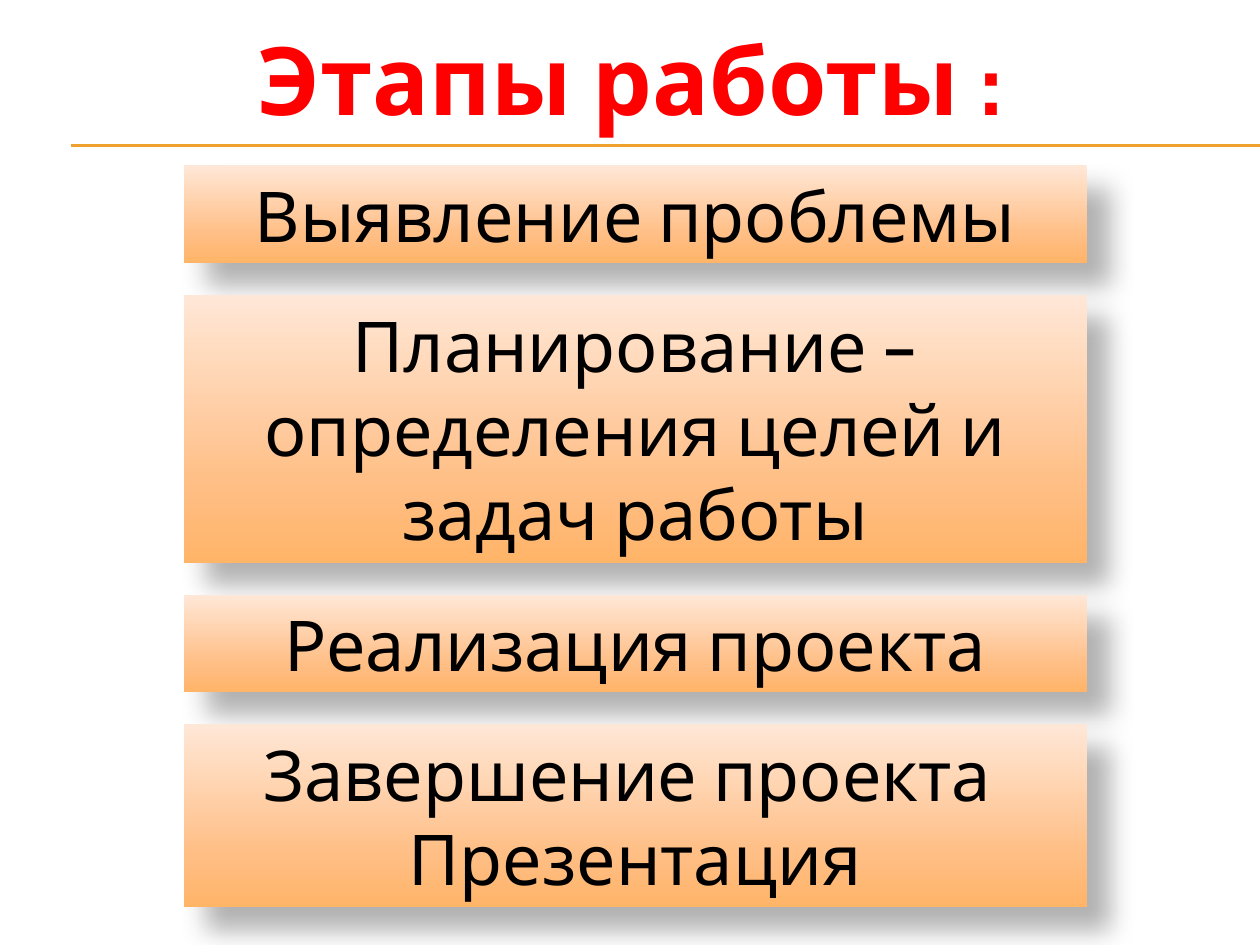
from copy import deepcopy

from lxml import etree
from pptx import Presentation
from pptx.dml.color import RGBColor
from pptx.enum import shapes, text
from pptx.oxml import ns
from pptx.util import Pt

RED = RGBColor(0xFF, 0x00, 0x00)
GOLD = RGBColor(0xF0, 0xA2, 0x2E)
BLACK = RGBColor(0x00, 0x00, 0x00)
STOPS = [
    (0, RGBColor(0xFF, 0xE7, 0xD7)),
    (0.72, RGBColor(0xFF, 0xBE, 0x84)),
    (1, RGBColor(0xFF, 0xB4, 0x68)),
]
FONT = "Cabin"
WIDTH, HEIGHT = 720, 540
LINE, PAD, GAP = 48.6, 7.2, 18.3  # text line, top and bottom inset, space between boxes

# Each stage: its paragraphs and the number of lines they fill
STAGES = [
    ("Выявление проблемы", 1),
    ("Планирование – определения целей и задач работы", 3),
    ("Реализация проекта", 1),
    ("Завершение проекта \nПрезентация", 2),
]


def style(frame, size, color, bold=False):
    frame.word_wrap = True
    frame.vertical_anchor = text.MSO_ANCHOR.MIDDLE
    for para in frame.paragraphs:
        para.alignment = text.PP_ALIGN.CENTER
        for run in para.runs:
            font = run.font
            font.name, font.size, font.bold = FONT, Pt(size), bold
            font.color.rgb = color


def add_title(slide, left, top, width, height):
    title = slide.shapes.title
    title.left, title.top = Pt(left), Pt(top)
    title.width, title.height = Pt(width), Pt(height)
    title.text_frame.text = "Этапы работы :"
    style(title.text_frame, 54, RED, True)


def add_rules(slide, left, top, width):
    """Draw the double line under the title."""
    for y in (top, top + 0.7):
        rule = slide.shapes.add_connector(
            shapes.MSO_CONNECTOR.STRAIGHT, Pt(left), Pt(y), Pt(left + width), Pt(y))
        rule.line.color.rgb = GOLD
        rule.line.width = Pt(0.75)
        etree.SubElement(rule._element.spPr, ns.qn("a:effectLst"))


def shade(shape):
    """Fill from top to bottom through all the colour stops."""
    shape.fill.gradient()
    shape.fill.gradient_angle = 270
    stops = shape._element.spPr.find(".//" + ns.qn("a:gsLst"))
    stops.append(deepcopy(stops[0]))
    for stop, (place, color) in zip(shape.fill.gradient_stops, STOPS):
        stop.position = place
        stop.color.rgb = color


def cast(shape):
    """Add a soft shadow to the lower right."""
    shape.shadow.inherit = False
    effects = shape._element.spPr.find(ns.qn("a:effectLst"))
    outer = etree.SubElement(
        effects, ns.qn("a:outerShdw"), blurRad=str(Pt(15)), dist=str(Pt(18)),
        dir=str(45 * 60000), algn="tl", rotWithShape="0")
    color = etree.SubElement(outer, ns.qn("a:srgbClr"), val=str(BLACK))
    etree.SubElement(color, ns.qn("a:alpha"), val="30000")


def add_stages(slide, left, top, width):
    for words, lines in STAGES:
        height = lines * LINE + PAD
        box = slide.shapes.add_shape(
            shapes.MSO_SHAPE.RECTANGLE, Pt(left), Pt(top), Pt(width), Pt(height))
        shade(box)
        cast(box)
        box.line.fill.background()
        box.text_frame.text = words
        box.text_frame.auto_size = text.MSO_AUTO_SIZE.SHAPE_TO_FIT_TEXT
        style(box.text_frame, 40, BLACK)
        top += height + GAP


def main():
    deck = Presentation()
    deck.slide_width, deck.slide_height = Pt(WIDTH), Pt(HEIGHT)
    slide = deck.slides.add_slide(deck.slide_layouts[5])
    add_rules(slide, 40.5, 82.8, WIDTH - 40.5)
    add_title(slide, 0, 0, WIDTH, 88.5)
    add_stages(slide, 104.9, 94.4, 516)
    deck.save("out.pptx")


if __name__ == "__main__":
    main()
